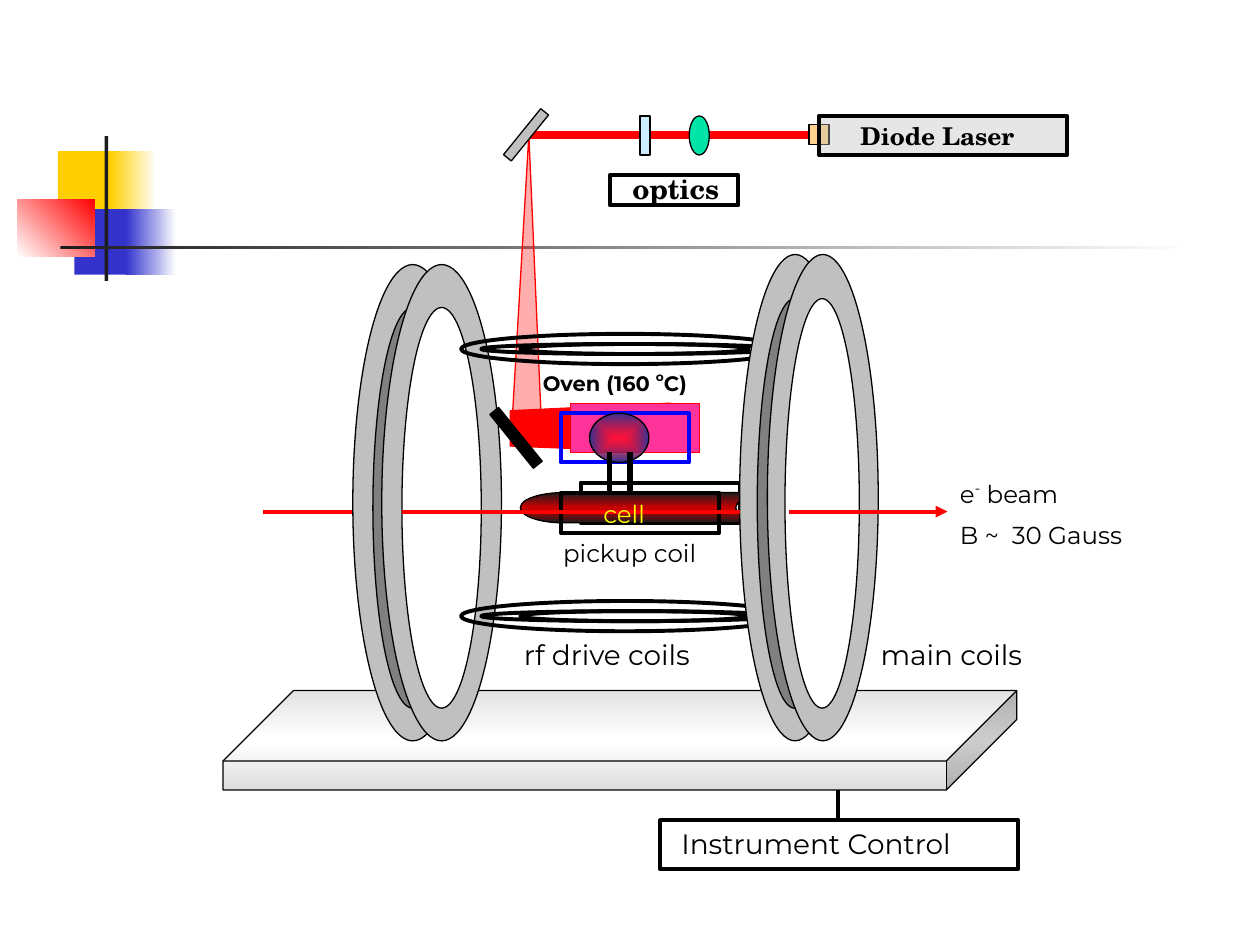
import pptx
import pptx.util
import pptx.dml.color
import pptx.enum.shapes
import pptx.enum.text
import pptx.oxml.ns
import pptx.oxml.xmlchemy

Inches = pptx.util.Inches
RGB = pptx.dml.color.RGBColor
SHAPE = pptx.enum.shapes.MSO_SHAPE
qn = pptx.oxml.ns.qn
new_element = pptx.oxml.xmlchemy.OxmlElement

BLACK = RGB(0, 0, 0)
WHITE = RGB(255, 255, 255)
RED = RGB(255, 0, 0)
YELLOW = RGB(255, 255, 0)
GOLD = RGB(0xFF, 0xCF, 0x01)
INDIGO = RGB(0x33, 0x33, 0xCC)
CHARCOAL = RGB(0x1C, 0x1C, 0x1C)
SILVER = RGB(0xC0, 0xC0, 0xC0)
GRAY = RGB(0x80, 0x80, 0x80)
PALE_GRAY = RGB(0xDD, 0xDD, 0xDD)
ORANGE = RGB(0xFF, 0x99, 0x00)
ICE = RGB(0xCC, 0xEC, 0xFF)
GREEN = RGB(0x00, 0xE4, 0xA8)
PINK = RGB(0xFF, 0x33, 0x99)
BLUE = RGB(0, 0, 255)
NAVY = RGB(0x33, 0x33, 0x99)
CRIMSON = RGB(0xCC, 0, 0)

SANS = "Montserrat"
SERIF = "TeX Gyre Schola"
THIN, THICK = 0.75, 2.25


def add_xml(parent, tag, **attributes):
    child = new_element(tag)
    for key, value in attributes.items():
        child.set(key, str(value))
    parent.append(child)
    return child


def add_color(parent, color, opacity=100):
    color_xml = add_xml(parent, "a:srgbClr", val=color)
    if opacity < 100:
        add_xml(color_xml, "a:alpha", val=opacity * 1000)


def set_gradient(shape, stops, angle=None):
    """Stops are (position, color[, opacity]); no angle means from the centre."""
    shape.fill.solid()
    solid = shape._element.spPr.find(qn("a:solidFill"))
    gradient = new_element("a:gradFill")
    stop_list = add_xml(gradient, "a:gsLst")
    for position, *color in stops:
        add_color(add_xml(stop_list, "a:gs", pos=position * 1000), *color)
    if angle is None:
        path_xml = add_xml(gradient, "a:path", path="shape")
        add_xml(path_xml, "a:fillToRect", l=50000, t=50000, r=50000, b=50000)
    else:
        add_xml(gradient, "a:lin", ang=angle * 60000, scaled=0)
    solid.getparent().replace(solid, gradient)


def style(shape, fill=None, line=None, width=THIN, opacity=100):
    shape.shadow.inherit = False
    if fill is None:
        shape.fill.background()
    else:
        shape.fill.solid()
        shape.fill.fore_color.rgb = fill
        if opacity < 100:
            color_xml = shape._element.spPr.find(qn("a:solidFill"))[0]
            add_xml(color_xml, "a:alpha", val=opacity * 1000)
    if line is None:
        shape.line.fill.background()
    else:
        shape.line.color.rgb = line
        shape.line.width = pptx.util.Pt(width)


def add_part(slide, kind, box, rotation=0, adjust=None, stops=None, angle=None, **look):
    part = slide.shapes.add_shape(kind, *map(Inches, box))
    part.rotation = rotation
    if adjust is not None:
        part.adjustments[0] = adjust
    style(part, **look)
    if stops:
        set_gradient(part, stops, angle)


def add_line(slide, start, end, color, width, arrow=False):
    straight = pptx.enum.shapes.MSO_CONNECTOR.STRAIGHT
    line = slide.shapes.add_connector(straight, *map(Inches, start + end))
    line.line.color.rgb = color
    line.line.width = pptx.util.Pt(width)
    if arrow:
        add_xml(line._element.spPr.find(qn("a:ln")), "a:tailEnd", type="triangle")
    add_xml(line._element.spPr, "a:effectLst")


def add_text(slide, paragraphs, box, size=14, font=SANS, color=BLACK, bold=False):
    """Each paragraph is a list of (text, baseline percent) runs, or a string."""
    frame = slide.shapes.add_textbox(*map(Inches, box)).text_frame
    frame.word_wrap = True
    frame.auto_size = pptx.enum.text.MSO_AUTO_SIZE.SHAPE_TO_FIT_TEXT
    for index, runs in enumerate(paragraphs):
        paragraph = frame.add_paragraph() if index else frame.paragraphs[0]
        if index:
            paragraph.space_before = pptx.util.Pt(size / 2)
        for text, baseline in [(runs, 0)] if isinstance(runs, str) else runs:
            run = paragraph.add_run()
            run.text = text
            run.font.size = pptx.util.Pt(size)
            run.font.name = font
            run.font.bold = bold
            run.font.color.rgb = color
            if baseline:
                run._r.get_or_add_rPr().set("baseline", str(baseline * 1000))


def add_main_coil(slide, left, top, width, height, shift, inner):
    """Two rings, each an outer ellipse with a smaller one on it."""
    inset, inner_top, inner_width, inner_height = inner
    for offset, hole in ((0, GRAY), (shift, WHITE)):
        x = left + offset
        add_part(slide, SHAPE.OVAL, (x, top, width, height), fill=SILVER, line=BLACK)
        add_part(slide, SHAPE.OVAL, (x + inset, inner_top, inner_width, inner_height),
                 fill=hole, line=BLACK)


def add_drive_coil(slide, top):
    for left, drop, width, height in ((3.66, 0, 2.6, 0.24), (3.82, 0.08, 2.36, 0.08),
                                      (4.13, 0.08, 1.81, 0.08)):
        add_part(slide, SHAPE.OVAL, (left, top + drop, width, height),
                 line=BLACK, width=THICK)


def add_corner_decoration(slide):
    rect = SHAPE.RECTANGLE
    add_part(slide, rect, (0.46, 1.2, 0.48, 0.52), fill=GOLD)
    add_part(slide, rect, (0.88, 1.2, 0.36, 0.52), stops=[(0, GOLD), (100, WHITE)], angle=0)
    add_part(slide, rect, (0.59, 1.66, 0.46, 0.52), fill=INDIGO)
    add_part(slide, rect, (1, 1.66, 0.4, 0.52), stops=[(0, INDIGO), (100, WHITE)], angle=0)
    add_part(slide, rect, (0.14, 1.58, 0.61, 0.46), stops=[(0, WHITE), (100, RED)], angle=315)
    add_part(slide, rect, (0.83, 1.08, 0.03, 1.15), fill=CHARCOAL)
    add_part(slide, rect, (0.48, 1.95, 9, 0.03), stops=[(0, CHARCOAL), (100, WHITE)], angle=0)


def add_beams_and_base(slide):
    corners = [tuple(map(Inches, point)) for point in
               ((5.32, 3.2), (4.05, 3.26), (4.05, 3.54), (5.32, 3.59))]
    builder = slide.shapes.build_freeform(*corners[0])
    builder.add_line_segments(corners[1:], close=True)
    style(builder.convert_to_shape(), fill=RED, line=RED)
    add_part(slide, SHAPE.ISOSCELES_TRIANGLE, (4.06, 1.07, 0.24, 2.36), adjust=0.574,
             fill=RED, opacity=32, line=RED)
    add_line(slide, (2.09, 4.06), (7.52, 4.06), RED, THICK, arrow=True)
    add_part(slide, SHAPE.CUBE, (1.77, 5.48, 6.3, 0.79), adjust=0.709, line=BLACK,
             stops=[(0, PALE_GRAY), (50, WHITE), (100, PALE_GRAY)], angle=90)


def add_laser_optics(slide):
    rect = SHAPE.RECTANGLE
    add_line(slide, (4.21, 1.07), (6.42, 1.07), RED, 4.5)
    add_part(slide, rect, (6.42, 0.99, 0.16, 0.16), fill=ORANGE, opacity=45, line=BLACK)
    add_part(slide, rect, (5.08, 0.92, 0.08, 0.31), fill=ICE, line=BLACK)
    add_part(slide, SHAPE.OVAL, (5.47, 0.92, 0.16, 0.31), fill=GREEN, line=BLACK)
    add_part(slide, rect, (6.5, 0.92, 1.97, 0.31), fill=SILVER, opacity=39,
             line=BLACK, width=THICK)
    add_part(slide, rect, (3.94, 1.03, 0.47, 0.08), rotation=309, fill=SILVER, line=BLACK)


def add_oven_and_cell(slide):
    rect = SHAPE.RECTANGLE
    add_part(slide, rect, (3.82, 3.43, 0.55, 0.09), rotation=51, fill=BLACK, line=BLACK)
    add_part(slide, rect, (4.53, 3.2, 1.02, 0.39), fill=PINK, line=RED)
    add_part(slide, rect, (4.45, 3.28, 1.02, 0.39), line=BLUE, width=THICK)
    add_part(slide, SHAPE.OVAL, (4.68, 3.28, 0.47, 0.39), line=BLACK,
             stops=[(0, RED, 62), (100, NAVY)])
    add_part(slide, rect, (4.61, 3.83, 1.26, 0.32), line=BLACK, width=THICK)
    add_part(slide, SHAPE.FLOWCHART_STORED_DATA, (4.13, 3.91, 2.05, 0.24), line=BLACK,
             stops=[(0, CHARCOAL), (50, CRIMSON), (100, CHARCOAL)], angle=90)
    add_part(slide, rect, (4.45, 3.91, 1.26, 0.32), line=BLACK, width=THICK)
    for x in (4.84, 5):
        add_line(slide, (x, 3.59), (x, 3.91), BLACK, 3)


def add_labels(slide):
    add_text(slide, ["cell"], (4.69, 3.91, 0.63, 0.33), color=YELLOW)
    add_part(slide, SHAPE.RECTANGLE, (4.84, 1.39, 1.02, 0.24), fill=WHITE,
             line=BLACK, width=THICK)
    add_text(slide, ["optics"], (4.92, 1.31, 1.1, 0.37), size=16, font=SERIF, bold=True)
    add_text(slide, ["Diode Laser"], (6.73, 0.91, 1.65, 0.33), font=SERIF, bold=True)
    add_text(slide, [[("Oven (160 ", 0), ("o", 50), ("C)", 0)]], (4.21, 2.88, 1.57, 0.3),
             size=12, bold=True)
    add_text(slide, ["pickup coil"], (4.37, 4.22, 1.65, 0.33))
    add_text(slide, [[("e", 0), ("-", 40), (" beam", 0)], "B ~  30 Gauss"],
             (7.52, 3.75, 1.89, 0.68))
    add_text(slide, ["main coils"], (6.89, 5.01, 1.81, 0.37), size=16)
    add_text(slide, ["rf drive coils"], (4.06, 5.01, 1.81, 0.37), size=16)
    add_part(slide, SHAPE.RECTANGLE, (5.24, 6.51, 2.84, 0.39), line=BLACK, width=THICK)
    add_text(slide, ["Instrument Control"], (5.31, 6.51, 2.6, 0.37), size=16)
    add_line(slide, (6.65, 6.27), (6.65, 6.51), BLACK, THICK)


def main():
    deck = pptx.Presentation()
    deck.slide_width, deck.slide_height = Inches(10), Inches(7.5)
    slide = deck.slides.add_slide(deck.slide_layouts[6])
    add_corner_decoration(slide)
    add_beams_and_base(slide)
    # Coils overlap the beams, so the order runs from back to front
    add_main_coil(slide, 2.8, 2.1, 0.95, 3.78, 0.23, (0.16, 2.44, 0.63, 3.18))
    add_laser_optics(slide)
    for top in (2.65, 4.77):
        add_drive_coil(slide, top)
    add_oven_and_cell(slide)
    add_main_coil(slide, 5.87, 2.02, 0.88, 3.86, 0.22, (0.14, 2.37, 0.59, 3.25))
    # Electron beam where it passes in front of the coils
    for start, end in ((3.19, 5.87), (6.26, 7.2)):
        add_line(slide, (start, 4.06), (end, 4.06), RED, THICK)
    add_labels(slide)
    deck.save("out.pptx")


if __name__ == "__main__":
    main()
